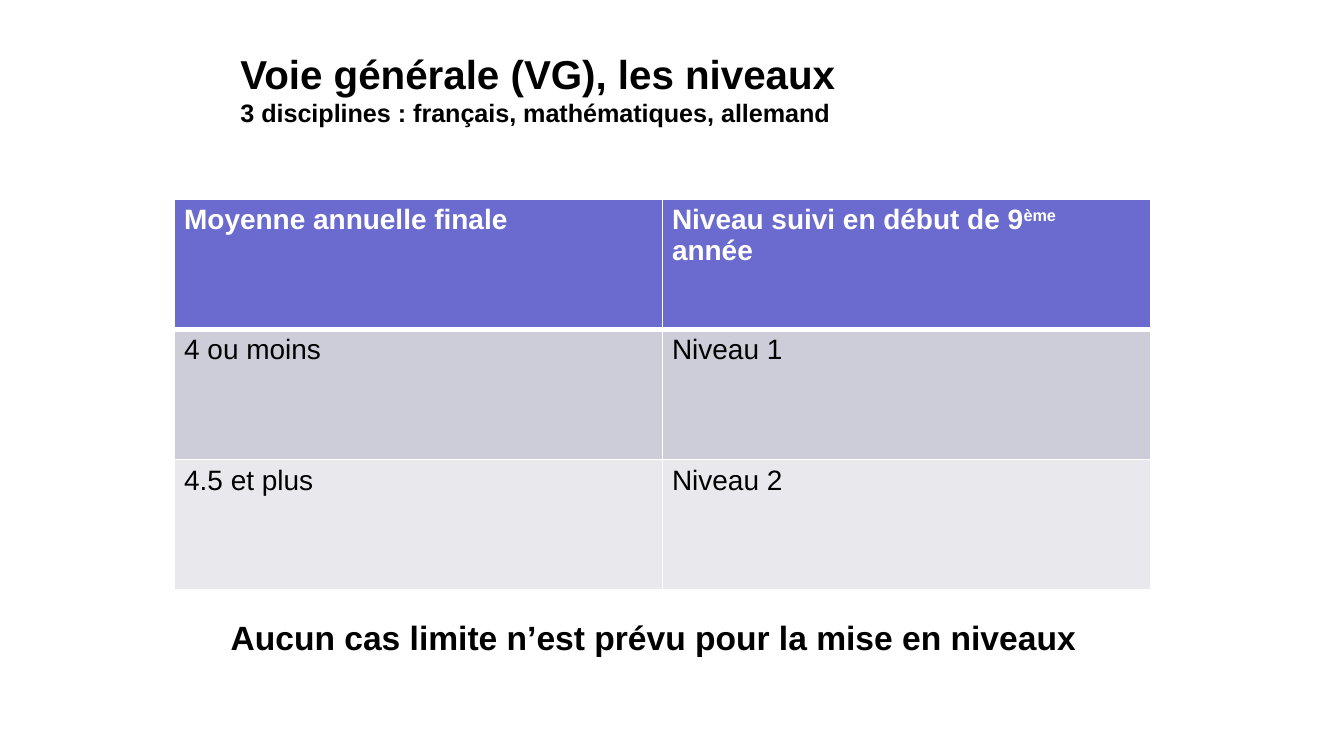
import pptx
import pptx.dml.color
import pptx.enum.text
import pptx.oxml
import pptx.oxml.ns
import pptx.util
from pptx.util import Cm

BLACK, WHITE = "000000", "FFFFFF"
ROW_FILLS = ["6B6BCF", "CDCDDA", "E8E8ED"]
ROWS = [
    [["Moyenne annuelle finale"], ["Niveau suivi en début de 9", "ème", " année"]],
    [["4 ou moins"], ["Niveau 1"]],
    [["4.5 et plus"], ["Niveau 2"]],
]


def rgb(color):
    """Return the colour for a hex string."""
    return pptx.dml.color.RGBColor.from_string(color)


def format_run(run, size, color=BLACK, bold=True):
    """Set the font of one run."""
    run.font.name = "Arial"
    run.font.size = pptx.util.Pt(size)
    run.font.bold = bold
    run.font.color.rgb = rgb(color)


def add_title(slide, heading, subheading):
    """Place the title with a smaller second line."""
    title = slide.shapes.title
    title.left, title.top, title.width, title.height = Cm(4.29), Cm(0.74), Cm(18.75), Cm(1.47)
    frame = title.text_frame
    frame.text = f"{heading}\v{subheading}"
    frame.word_wrap = True
    frame.auto_size = pptx.enum.text.MSO_AUTO_SIZE.NONE
    frame.vertical_anchor = pptx.enum.text.MSO_ANCHOR.TOP
    frame.margin_top = Cm(0.18)
    paragraph = frame.paragraphs[0]
    paragraph.alignment = pptx.enum.text.PP_ALIGN.LEFT
    for run, size in zip(paragraph.runs, (21.6, 13.5)):
        format_run(run, size)


def set_borders(cell, widths):
    """Draw white cell borders with the given widths in points."""
    properties = cell._tc.get_or_add_tcPr()
    for side, width in widths.items():
        properties.append(pptx.oxml.parse_xml(
            f'<a:ln{side} {pptx.oxml.ns.nsdecls("a")} w="{pptx.util.Pt(width)}">'
            f'<a:solidFill><a:srgbClr val="{WHITE}"/></a:solidFill></a:ln{side}>'))


def fill_cell(cell, parts, row):
    """Write a cell, raising every second part as superscript."""
    header = row == 0
    cell.margin_left = cell.margin_right = Cm(0.18)
    cell.margin_top = cell.margin_bottom = Cm(0.1)
    set_borders(cell, {"L": 1, "R": 1, "T": 3 if row == 1 else 1, "B": 3 if header else 1})
    cell.fill.solid()
    cell.fill.fore_color.rgb = rgb(ROW_FILLS[row])
    paragraph = cell.text_frame.paragraphs[0]
    for index, part in enumerate(parts):
        run = paragraph.add_run()
        run.text = part
        format_run(run, 15, WHITE if header else BLACK, header)
        if index % 2:
            run._r.get_or_add_rPr().set("baseline", "30000")


def add_level_table(slide):
    """Add the table of averages and levels."""
    table = slide.shapes.add_table(
        len(ROWS), len(ROWS[0]), Cm(3.3), Cm(3.76), Cm(18.44), Cm(7.38)).table
    for row, texts in enumerate(ROWS):
        for column, parts in enumerate(texts):
            fill_cell(table.cell(row, column), parts, row)


def add_note(slide, text):
    """Add the closing statement below the table."""
    frame = slide.shapes.add_textbox(Cm(4.11), Cm(11.48), Cm(16.81), Cm(1.02)).text_frame
    frame.text = text
    frame.word_wrap = True
    frame.auto_size = pptx.enum.text.MSO_AUTO_SIZE.SHAPE_TO_FIT_TEXT
    paragraph = frame.paragraphs[0]
    paragraph.line_spacing = pptx.util.Pt(23.1)
    format_run(paragraph.runs[0], 18)


def main():
    """Build and save the slide."""
    presentation = pptx.Presentation()
    presentation.slide_width, presentation.slide_height = Cm(25.4), Cm(14.28)
    slide = presentation.slides.add_slide(presentation.slide_layouts[5])
    add_title(slide, "Voie générale (VG), les niveaux",
              "3 disciplines : français, mathématiques, allemand")
    add_level_table(slide)
    add_note(slide, "Aucun cas limite n’est prévu pour la mise en niveaux")
    presentation.save("out.pptx")


if __name__ == "__main__":
    main()
